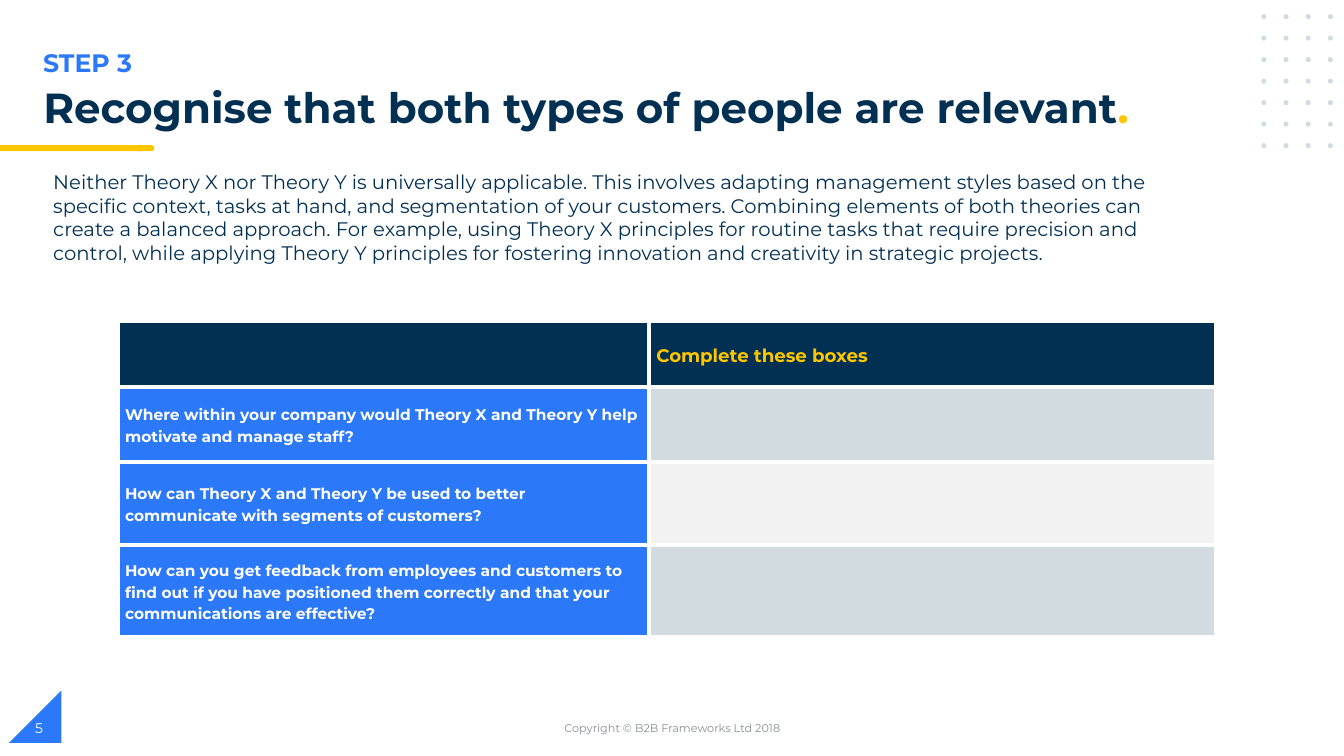
"""Build the Step 3 worksheet slide on Theory X and Theory Y."""
import dataclasses

import lxml.etree
import pptx
import pptx.dml.color
import pptx.enum.shapes
import pptx.enum.text
import pptx.oxml.ns
import pptx.util

Inches = pptx.util.Inches
Pt = pptx.util.Pt
Shape = pptx.enum.shapes.MSO_SHAPE
Anchor = pptx.enum.text.MSO_ANCHOR
Align = pptx.enum.text.PP_ALIGN
qn = pptx.oxml.ns.qn


@dataclasses.dataclass(frozen=True)
class Theme:
    font: str = "Montserrat"
    navy: str = "023053"
    blue: str = "2B79F8"
    yellow: str = "FFC600"
    mist: str = "D1DBE0"
    pale: str = "F2F2F2"
    grey: str = "888C97"
    white: str = "FFFFFF"
    title_size: float = 30
    step_size: float = 18
    body_size: float = 14
    header_size: float = 13
    question_size: float = 11
    number_size: float = 10
    footer_size: float = 8
    border_width: float = 3


class SlideBuilder:
    def __init__(self, slide, theme):
        self.slide = slide
        self.theme = theme

    def color(self, value):
        return pptx.dml.color.RGBColor.from_string(value)

    def place(self, item, left, top, width, height):
        item.left, item.top = Inches(left), Inches(top)
        item.width, item.height = Inches(width), Inches(height)

    def fill(self, item, color):
        item.fill.solid()
        item.fill.fore_color.rgb = self.color(color)

    def add_spans(self, frame, runs, size, bold=False, align=Align.LEFT, spacing=1.0):
        para = frame.paragraphs[0]
        para.alignment = align
        para.line_spacing = spacing
        for text, color in runs:
            span = para.add_run()
            span.text = text
            span.font.name = self.theme.font
            span.font.size = Pt(size)
            span.font.bold = bold
            span.font.color.rgb = self.color(color)

    def frame(self, item, anchor):
        frame = item.text_frame
        frame.word_wrap = True
        frame.auto_size = pptx.enum.text.MSO_AUTO_SIZE.NONE
        frame.vertical_anchor = anchor
        frame.margin_left = frame.margin_right = Inches(0.1)
        frame.margin_top = frame.margin_bottom = Inches(0.05)
        return frame

    def title(self, bounds, runs):
        title = self.slide.shapes.title
        self.place(title, *bounds)
        self.add_spans(self.frame(title, Anchor.TOP), runs, self.theme.title_size,
                       bold=True, spacing=0.9)

    def text(self, bounds, text, size, color, anchor=Anchor.TOP, **style):
        box = self.slide.shapes.add_textbox(*map(Inches, bounds))
        self.add_spans(self.frame(box, anchor), [(text, color)], size, **style)

    def shape(self, kind, bounds, color, flip=False):
        shape = self.slide.shapes.add_shape(kind, *map(Inches, bounds))
        shape.shadow.inherit = False
        shape.line.fill.background()
        self.fill(shape, color)
        if flip:
            shape.element.spPr.find(qn("a:xfrm")).set("flipH", "1")

    def dots(self, left, top, columns, rows, step_x, step_y, size):
        for row in range(rows):
            for column in range(columns):
                bounds = (left + column * step_x, top + row * step_y, size, size)
                self.shape(Shape.OVAL, bounds, self.theme.mist)

    def borders(self, cell):
        properties = cell._tc.get_or_add_tcPr()
        for side in ("lnL", "lnR", "lnT", "lnB"):
            line = lxml.etree.SubElement(properties, qn(f"a:{side}"),
                                         w=str(Pt(self.theme.border_width)))
            solid = lxml.etree.SubElement(line, qn("a:solidFill"))
            lxml.etree.SubElement(solid, qn("a:srgbClr"), val=self.theme.white)

    def cell(self, cell, text, fill, size, color):
        self.borders(cell)
        self.fill(cell, fill)
        cell.vertical_anchor = Anchor.MIDDLE
        cell.margin_left = cell.margin_right = Inches(0.07)
        cell.margin_top = cell.margin_bottom = 0
        if text:
            self.add_spans(cell.text_frame, [(text, color)], size, bold=True, spacing=1.15)

    def worksheet(self, left, top, widths, heights, header, questions):
        theme = self.theme
        table = self.slide.shapes.add_table(
            len(heights), len(widths), Inches(left), Inches(top),
            Inches(sum(widths)), Inches(sum(heights))).table
        for column, width in zip(table.columns, widths):
            column.width = Inches(width)
        for row, height in zip(table.rows, heights):
            row.height = Inches(height)
        for index, text in enumerate(("", header)):
            self.cell(table.cell(0, index), text, theme.navy,
                      theme.header_size, theme.yellow)
        for index, question in enumerate(questions, 1):
            self.cell(table.cell(index, 0), question, theme.blue,
                      theme.question_size, theme.white)
            self.cell(table.cell(index, 1), "", theme.mist if index % 2 else theme.pale,
                      theme.question_size, theme.navy)


def main():
    theme = Theme()
    deck = pptx.Presentation()
    deck.slide_width, deck.slide_height = Inches(13.33), Inches(7.5)
    page = SlideBuilder(deck.slides.add_slide(deck.slide_layouts[5]), theme)

    page.shape(Shape.RIGHT_TRIANGLE, (0.09, 6.85, 0.52, 0.52), theme.blue, flip=True)
    page.shape(Shape.FLOWCHART_TERMINATOR, (1.34, 1.44, 0.19, 0.06), theme.yellow)
    page.shape(Shape.RECTANGLE, (0, 1.44, 1.41, 0.06), theme.yellow)
    page.dots(12.51, 0.14, columns=4, rows=7, step_x=0.22, step_y=1.28 / 6, size=0.05)

    page.text((0.33, 0.42, 6.69, 0.4), "STEP 3", theme.step_size, theme.blue, bold=True)
    page.title((0.33, 0.82, 11.59, 0.56), [
        ("Recognise that both types of people are relevant", theme.navy),
        (".", theme.yellow),
    ])
    page.text(
        (0.43, 1.64, 11.53, 1.04),
        "Neither Theory X nor Theory Y is universally applicable. This involves adapting "
        "management styles based on the specific context, tasks at hand, and segmentation "
        "of your customers. Combining elements of both theories can create a balanced "
        "approach. For example, using Theory X principles for routine tasks that require "
        "precision and control, while applying Theory Y principles for fostering "
        "innovation and creativity in strategic projects.",
        theme.body_size, theme.navy)
    page.worksheet(
        1.17, 3.19, widths=(5.27, 5.62), heights=(0.65, 0.74, 0.83, 0.91),
        header="Complete these boxes",
        questions=(
            "Where within your company would Theory X and Theory Y help motivate and "
            "manage staff?",
            "How can Theory X and Theory Y be used to better communicate with segments "
            "of customers?",
            "How can you get feedback from employees and customers to find out if you "
            "have positioned them correctly and that your communications are effective?",
        ))
    page.text((4.42, 7.02, 4.5, 0.4), "Copyright © B2B Frameworks Ltd 2018",
              theme.footer_size, theme.grey, Anchor.MIDDLE, align=Align.CENTER)
    page.text((0.25, 7.02, 3, 0.4), "5", theme.number_size, theme.white, Anchor.MIDDLE)

    deck.save("out.pptx")


if __name__ == "__main__":
    main()
